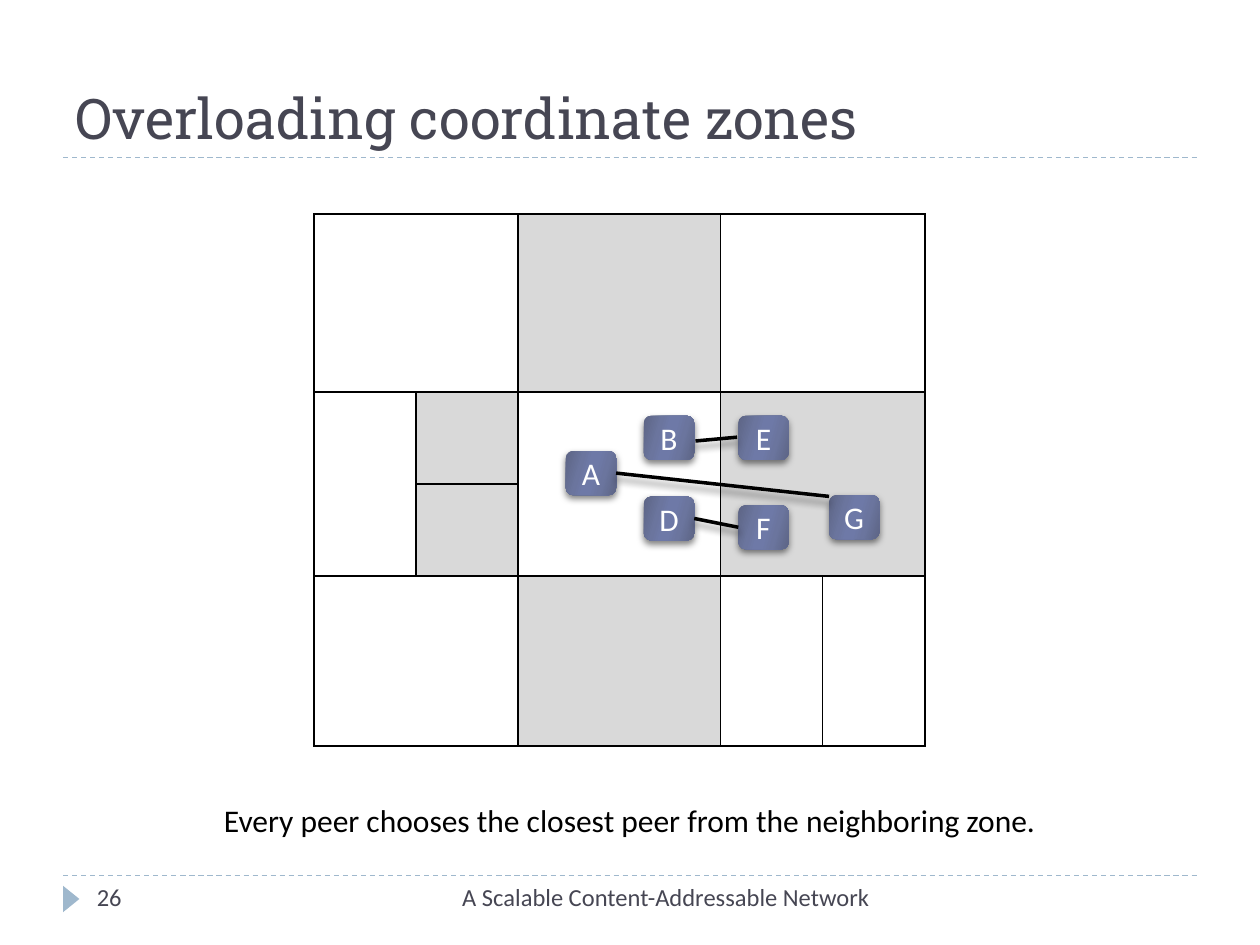
from lxml.etree import SubElement as Sub
from pptx import Presentation
from pptx.dml.color import RGBColor as Rgb
from pptx.enum.dml import MSO_LINE as Dash
from pptx.enum.shapes import MSO_CONNECTOR as Link, MSO_SHAPE as Kind
from pptx.enum.text import MSO_ANCHOR as Anchor, PP_ALIGN as Align
from pptx.oxml.ns import qn
from pptx.util import Inches, Pt

# Content
TITLE = "Overloading coordinate zones"
NOTE = "Every peer chooses the closest peer from the neighboring zone."
PAGE, FOOTER = "26", "A Scalable Content-Addressable Network"

# Zone grid: sizes, merged areas (first cell, last cell), shaded cells
COLS = [0.81, 0.81, 1.61, 0.81, 0.81]
ROWS = [1.41, 0.73, 0.73, 1.35]
SPANS = [((0, 0), (0, 1)), ((0, 3), (0, 4)), ((1, 0), (2, 0)),
         ((1, 2), (2, 2)), ((1, 3), (2, 4)), ((3, 0), (3, 1))]
SHADED = {(0, 2), (1, 1), (1, 3), (2, 1), (3, 2)}

# Peers by left and top; a link end is a peer or a free point
PEERS = {"A": (4.49, 3.58), "B": (5.11, 3.3), "D": (5.11, 3.94),
         "F": (5.86, 4.01), "E": (5.86, 3.3), "G": (6.58, 3.93)}
PEER_W, PEER_H = 0.4, 0.35
LINKS = [("D", "F"), ((5.52, 3.5), (5.85, 3.47)), ("A", (6.58, 3.94))]
RIGHT, LEFT = 3, 1

THEME = {
    "head": "Roboto Slab", "body": "Calibri",
    "dark": "464653", "rule": "9FB8CD", "ink": "000000",
    "paper": "FFFFFF", "shade": "D9D9D9",
    "grad": [(0, "5D6585"), (30, "6B759E"), (45, "6E79A7"),
             (55, "6E79A7"), (73, "6B759E"), (100, "5D6585")],
    "title": 32, "text": 18, "small": 14,
}


def tint(name):
    return Rgb.from_string(THEME[name])


def write(shape, text, size, color, align=Align.LEFT, face="body"):
    frame = shape.text_frame
    frame.word_wrap = True
    frame.text = text
    par = frame.paragraphs[0]
    par.alignment = align
    par.font.name, par.font.size = THEME[face], Pt(THEME[size])
    par.font.color.rgb = tint(color)
    return frame


def box(slide, area, *style):
    write(slide.shapes.add_textbox(*map(Inches, area)), *style)


def effect(shape, alpha=0, blur=0, dist=0):
    """Give a shape its own drop shadow, or none when alpha is 0."""
    group = Sub(shape._element.spPr, qn("a:effectLst"))
    if alpha:
        cast = Sub(group, qn("a:outerShdw"), blurRad=str(Pt(blur)),
                   dist=str(Pt(dist)), dir="5400000", rotWithShape="0")
        ink = Sub(cast, qn("a:srgbClr"), val=THEME["ink"])
        Sub(ink, qn("a:alpha"), val=str(alpha * 1000))


def stroke(slide, start, end, color, width):
    line = slide.shapes.add_connector(Link.STRAIGHT, *map(Inches, start + end))
    line.line.color.rgb = tint(color)
    line.line.width = Pt(width)
    return line


def frame(slide):
    """Dashed rules, marker, page number and footer."""
    for y in (6.95, 1.25):
        rule = stroke(slide, (0.5, y), (9.5, y), "rule", 0.75)
        rule.line.dash_style = Dash.DASH
        effect(rule)
    mark = slide.shapes.add_shape(
        Kind.ISOSCELES_TRIANGLE, *map(Inches, (0.46, 7.07, 0.21, 0.13)))
    mark.rotation = 90
    mark.shadow.inherit = False
    mark.fill.solid()
    mark.fill.fore_color.rgb = tint("rule")
    mark.line.fill.background()
    box(slide, (0.67, 6.95, 2.17, 0.4), PAGE, "small", "dark")
    box(slide, (3.17, 6.95, 3.83, 0.4), FOOTER, "small", "dark", Align.RIGHT)


def border(cell):
    props = cell._tc.get_or_add_tcPr()
    for side in ("lnL", "lnR", "lnT", "lnB"):
        edge = Sub(props, qn(f"a:{side}"), w=str(Pt(1)))
        Sub(Sub(edge, qn("a:solidFill")), qn("a:srgbClr"), val=THEME["ink"])


def zones(slide):
    area = map(Inches, (2.49, 1.7, sum(COLS), sum(ROWS)))
    table = slide.shapes.add_table(len(ROWS), len(COLS), *area).table
    table.first_row = table.horz_banding = False
    for col, width in zip(table.columns, COLS):
        col.width = Inches(width)
    for row, height in zip(table.rows, ROWS):
        row.height = Inches(height)
    for r in range(len(ROWS)):
        for c in range(len(COLS)):
            cell = table.cell(r, c)
            border(cell)
            if (r, c) in SHADED:
                cell.fill.solid()
                cell.fill.fore_color.rgb = tint("shade")
            else:
                cell.fill.background()
    for first, last in SPANS:
        table.cell(*first).merge(table.cell(*last))


def peer(slide, name, spot):
    node = slide.shapes.add_shape(
        Kind.ROUNDED_RECTANGLE, *map(Inches, spot + (PEER_W, PEER_H)))
    node.fill.gradient()
    node.fill.gradient_angle = 344  # counter-clockwise, so 16 degrees clockwise
    stops = node._element.spPr.find(".//" + qn("a:gsLst"))
    for old in list(stops):
        stops.remove(old)
    for pos, color in THEME["grad"]:
        stop = Sub(stops, qn("a:gs"), pos=str(pos * 1000))
        Sub(stop, qn("a:srgbClr"), val=color)
    node.line.fill.background()
    effect(node, 50, 4, 2)
    text = write(node, name, "text", "paper", Align.CENTER)
    text.vertical_anchor = Anchor.MIDDLE
    return node


def network(slide):
    nodes = {name: peer(slide, name, spot) for name, spot in PEERS.items()}
    for start, end in LINKS:
        line = stroke(slide, PEERS.get(start, start), PEERS.get(end, end),
                      "ink", 2)
        if start in nodes:
            line.begin_connect(nodes[start], RIGHT)
        if end in nodes:
            line.end_connect(nodes[end], LEFT)
        effect(line, 40, 4, 3.4)


def main():
    deck = Presentation()
    deck.slide_width, deck.slide_height = Inches(10), Inches(7.5)
    slide = deck.slides.add_slide(deck.slide_layouts[5])
    frame(slide)

    # Title
    title = slide.shapes.title
    title.left, title.top, title.width, title.height = map(
        Inches, (0.5, 0.17, 9, 1.08))
    text = write(title, TITLE, "title", "dark", face="head")
    text.vertical_anchor = Anchor.BOTTOM

    # Zones, peers and caption
    zones(slide)
    network(slide)
    box(slide, (1.5, 6.31, 7, 0.4), NOTE, "text", "ink", Align.CENTER)
    deck.save("out.pptx")


if __name__ == "__main__":
    main()
